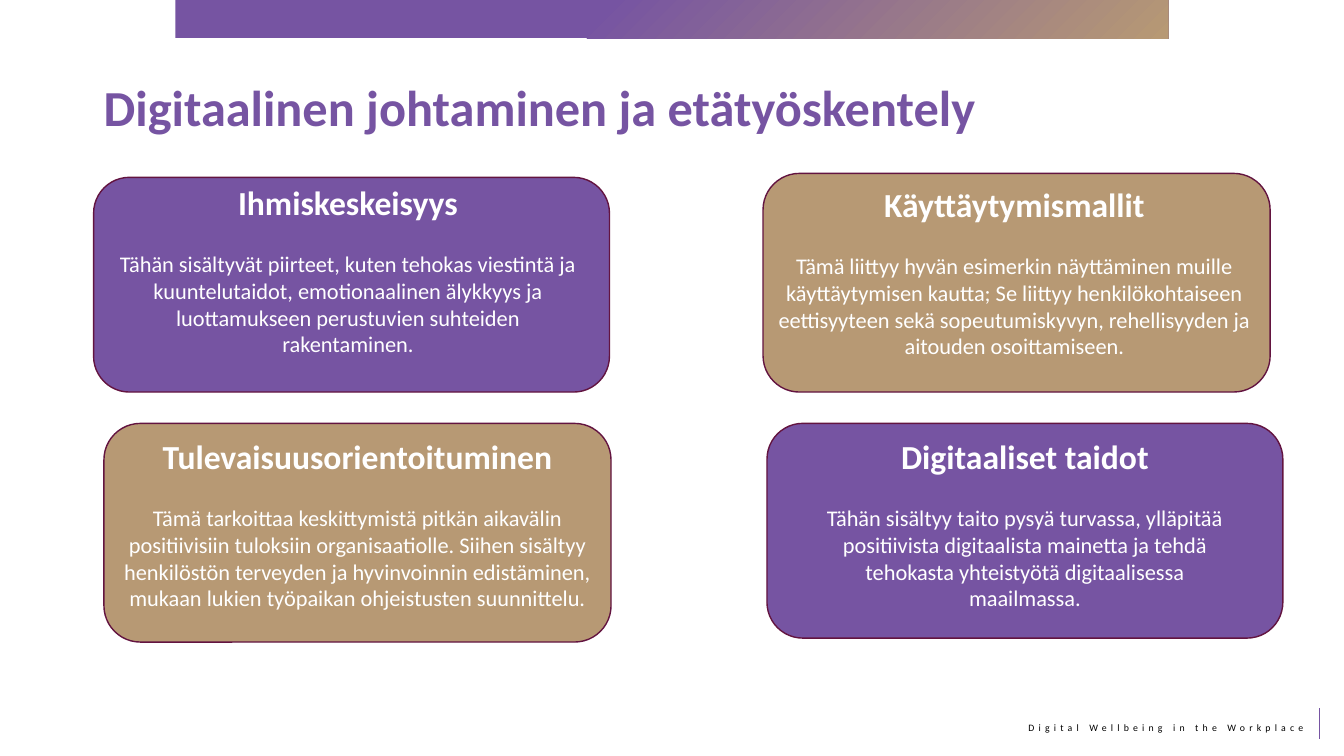
from dataclasses import dataclass

import pptx
import pptx.dml.color
import pptx.enum.dml
import pptx.enum.shapes
import pptx.enum.text
import pptx.oxml
import pptx.oxml.ns
import pptx.util
from pptx.util import Cm

Align = pptx.enum.text.PP_ALIGN
Anchor = pptx.enum.text.MSO_ANCHOR
Preset = pptx.enum.shapes.MSO_SHAPE


@dataclass(frozen=True)
class Theme:
    font: str = "Calibri"
    purple: str = "7654A2"
    tan: str = "B79974"
    outline: str = "631440"
    white: str = "FFFFFF"
    black: str = "000000"
    title_size: float = 36
    heading_size: float = 24
    text_size: float = 16
    footer_size: float = 7
    text_gap: float = 19.5


THEME = Theme()


@dataclass(frozen=True)
class Box:
    """A rectangle in centimetres."""
    left: float
    top: float
    width: float
    height: float

    def lengths(self) -> tuple:
        return Cm(self.left), Cm(self.top), Cm(self.width), Cm(self.height)


@dataclass(frozen=True)
class Card:
    heading: str
    text: str
    color: str
    panel: Box
    text_box: Box


PURPLE_SIZE = (13, 5.41)
TAN_SIZE = (12.78, 5.51)
TEXT_HEIGHT = 4.7

CARDS = [
    Card("Ihmiskeskeisyys",
         "Tähän sisältyvät piirteet, kuten tehokas viestintä ja kuuntelutaidot, "
         "emotionaalinen älykkyys ja luottamukseen perustuvien suhteiden rakentaminen.",
         THEME.purple, Box(2.36, 4.47, *PURPLE_SIZE), Box(2.51, 4.47, 12.52, TEXT_HEIGHT)),
    Card("Käyttäytymismallit",
         "Tämä liittyy hyvän esimerkin näyttäminen muille käyttäytymisen kautta; "
         "Se liittyy henkilökohtaiseen eettisyyteen sekä sopeutumiskyvyn, "
         "rehellisyyden ja aitouden osoittamiseen.",
         THEME.tan, Box(19.23, 4.37, *TAN_SIZE), Box(19.33, 4.52, 12.47, TEXT_HEIGHT)),
    Card("Digitaaliset taidot",
         "Tähän sisältyy taito pysyä turvassa, ylläpitää positiivista digitaalista "
         "mainetta ja tehdä tehokasta yhteistyötä digitaalisessa maailmassa.",
         THEME.purple, Box(19.33, 10.67, *PURPLE_SIZE), Box(20.09, 10.87, 11.48, TEXT_HEIGHT)),
    Card("Tulevaisuusorientoituminen",
         "Tämä tarkoittaa keskittymistä pitkän aikavälin positiivisiin tuloksiin "
         "organisaatiolle. Siihen sisältyy henkilöstön terveyden ja hyvinvoinnin "
         "edistäminen, mukaan lukien työpaikan ohjeistusten suunnittelu.",
         THEME.tan, Box(2.62, 10.67, *TAN_SIZE), Box(2.62, 10.87, 12.78, TEXT_HEIGHT)),
]


def rgb(color: str) -> pptx.dml.color.RGBColor:
    return pptx.dml.color.RGBColor.from_string(color)


def write(para, text: str, *, size: float, color: str, bold: bool = False,
          align: Align = Align.LEFT, before: float = 0, tracking: float = 0) -> None:
    """Add formatted text to a paragraph; sizes and gaps are in points."""
    para.alignment = align
    para.space_before = pptx.util.Pt(before)
    span = para.add_run()
    span.text = text
    span.font.name = THEME.font
    span.font.size = pptx.util.Pt(size)
    span.font.bold = bold
    span.font.color.rgb = rgb(color)
    if tracking:
        span.font._element.set("spc", str(round(tracking * 100)))


def add_text_frame(page, box: Box):
    frame = page.shapes.add_textbox(*box.lengths()).text_frame
    frame.word_wrap = True
    return frame


def add_top_bar(page) -> None:
    """Draw the bar whose gradient radiates from its lower right corner."""
    bar = page.shapes.add_shape(Preset.RECTANGLE, *Box(4.42, 0, 25.02, 0.97).lengths())
    bar.shadow.inherit = False
    bar.line.fill.background()
    bar.fill.gradient()
    stops = [(0, THEME.tan), (0.58, THEME.purple)]
    for stop, (position, color) in zip(bar.fill.gradient_stops, stops):
        stop.position = position
        stop.color.rgb = rgb(color)
    gradient = bar._element.spPr.find(pptx.oxml.ns.qn("a:gradFill"))
    gradient.replace(gradient.find(pptx.oxml.ns.qn("a:lin")), pptx.oxml.parse_xml(
        f'<a:path {pptx.oxml.ns.nsdecls("a")} path="circle">'
        '<a:fillToRect l="100000" t="100000"/></a:path>'))


def add_footer(page) -> None:
    frame = add_text_frame(page, Box(24.59, 18.06, 8.51, 0.56))
    write(frame.paragraphs[0], "Digital Wellbeing in the Workplace",
          size=THEME.footer_size, color=THEME.black, align=Align.RIGHT, tracking=3)
    rule = page.shapes.add_connector(pptx.enum.shapes.MSO_CONNECTOR.STRAIGHT,
                                     Cm(33.25), Cm(18.62), Cm(33.25), Cm(17.83))
    rule.line.color.rgb = rgb(THEME.purple)
    rule.line.width = pptx.util.Pt(0.75)
    rule._element.spPr.append(pptx.oxml.parse_xml(
        f'<a:effectLst {pptx.oxml.ns.nsdecls("a")}/>'))


def add_title(page, text: str) -> None:
    title = page.shapes.title
    title.left, title.top, title.width, title.height = Box(2.36, 1.73, 29.11, 2.24).lengths()
    frame = title.text_frame
    frame.auto_size = pptx.enum.text.MSO_AUTO_SIZE.NONE
    frame.vertical_anchor = Anchor.TOP
    frame.margin_top = Cm(0.2)
    write(frame.paragraphs[0], text, size=THEME.title_size, color=THEME.purple, bold=True)


def add_card(page, card: Card) -> None:
    panel = page.shapes.add_shape(Preset.ROUNDED_RECTANGLE, *card.panel.lengths())
    panel.shadow.inherit = False
    panel.fill.solid()
    panel.fill.fore_color.rgb = rgb(card.color)
    panel.line.color.rgb = rgb(THEME.outline)
    panel.line.width = pptx.util.Pt(1)
    frame = add_text_frame(page, card.text_box)
    write(frame.paragraphs[0], card.heading, size=THEME.heading_size,
          color=THEME.white, bold=True, align=Align.CENTER)
    write(frame.add_paragraph(), card.text, size=THEME.text_size,
          color=THEME.white, align=Align.CENTER, before=THEME.text_gap)


def main() -> None:
    deck = pptx.Presentation()
    deck.slide_width, deck.slide_height = Cm(33.87), Cm(19.05)
    page = deck.slides.add_slide(deck.slide_layouts.get_by_name("Title Only"))
    add_footer(page)
    add_top_bar(page)
    add_title(page, "Digitaalinen johtaminen ja etätyöskentely")
    for card in CARDS:
        add_card(page, card)
    deck.save("out.pptx")


if __name__ == "__main__":
    main()
